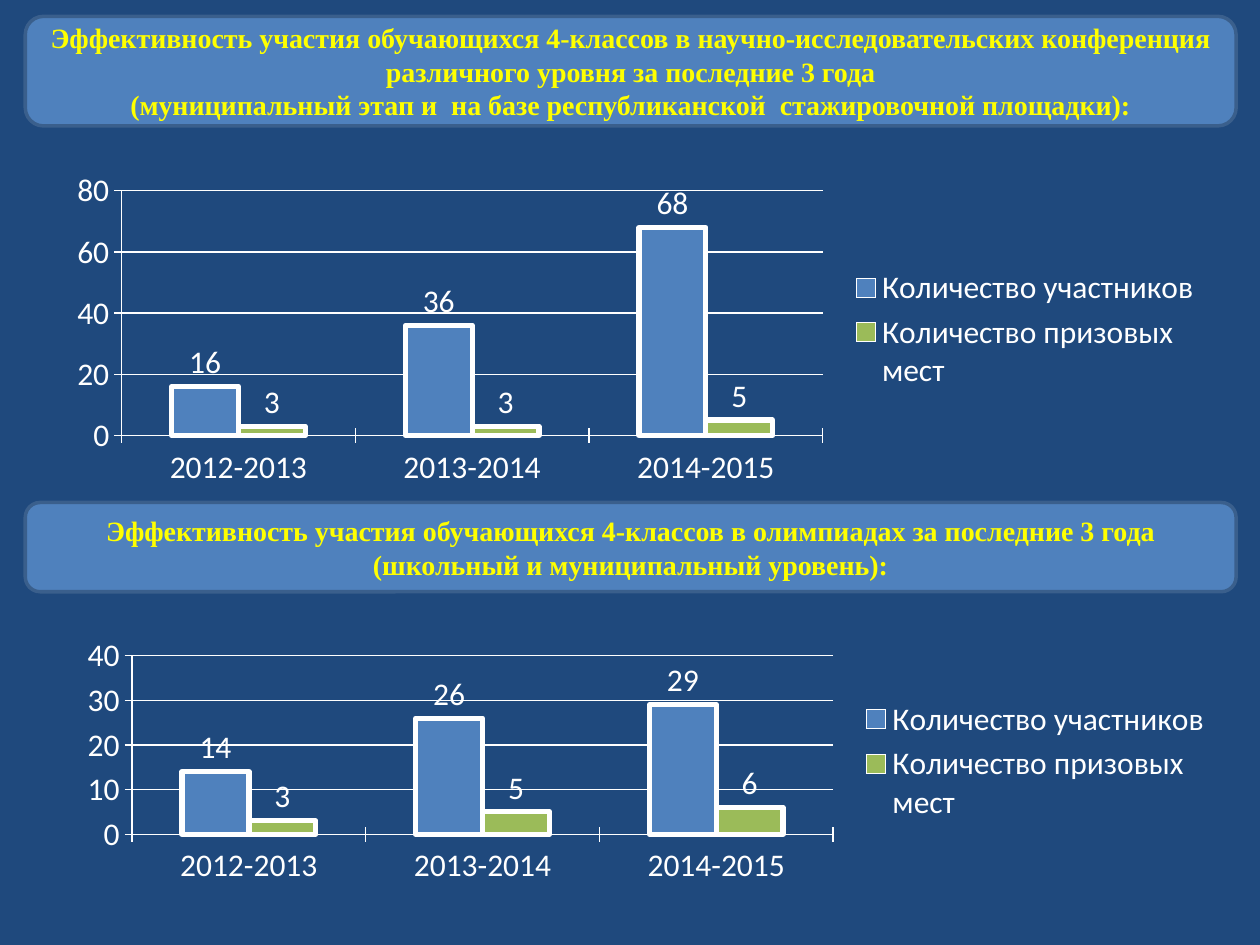
from pptx import Presentation
from pptx.chart.data import CategoryChartData
from pptx.dml.color import RGBColor
from pptx.enum.chart import XL_CHART_TYPE as ChartType
from pptx.enum.chart import XL_LABEL_POSITION as LabelPosition
from pptx.enum.chart import XL_LEGEND_POSITION as LegendPosition
from pptx.enum.chart import XL_TICK_MARK as TickMark
from pptx.enum.shapes import MSO_SHAPE as Shape
from pptx.enum.text import MSO_ANCHOR as Anchor
from pptx.enum.text import PP_ALIGN as Align
from pptx.util import Cm, Pt

NAVY = RGBColor(0x1F, 0x49, 0x7D)
BLUE = RGBColor(0x4F, 0x81, 0xBD)
BLUE_EDGE = RGBColor(0x3A, 0x5F, 0x8C)
GREEN = RGBColor(0x9B, 0xBB, 0x59)
YELLOW = RGBColor(0xFF, 0xFF, 0x00)
WHITE = RGBColor(0xFF, 0xFF, 0xFF)

YEARS = ["2012-2013", "2013-2014", "2014-2015"]
SERIES = [("Количество участников", BLUE), ("Количество призовых мест", GREEN)]
BANNER_LEFT, BANNER_WIDTH = 0.51, 24.41
CHART_WIDTH = 23.39

# Positions are in centimetres: banner (top, height), chart (left, top, height)
SECTIONS = [
    {
        "heading": [
            "Эффективность участия обучающихся 4-классов в научно-исследовательских "
            "конференция различного уровня за последние 3 года",
            "(муниципальный этап и  на базе республиканской  стажировочной площадки):",
        ],
        "banner": (0.33, 2.21),
        "chart": (1.09, 3.33, 6.6),
        "values": [(16, 36, 68), (3, 3, 5)],
        "scale": (80, 20),
    },
    {
        "heading": [
            "Эффективность участия обучающихся 4-классов в олимпиадах за последние 3 года",
            "(школьный и муниципальный уровень):",
        ],
        "banner": (10.13, 1.8),
        "chart": (1.3, 12.73, 5.21),
        "values": [(14, 26, 29), (3, 5, 6)],
        "scale": (40, 10),
    },
]


def set_line(line, color, width):
    line.color.rgb = color
    line.width = Pt(width)


def add_banner(slide, lines, top, height):
    banner = slide.shapes.add_shape(
        Shape.ROUNDED_RECTANGLE,
        Cm(BANNER_LEFT), Cm(top), Cm(BANNER_WIDTH), Cm(height),
    )
    banner.shadow.inherit = False
    banner.fill.solid()
    banner.fill.fore_color.rgb = BLUE
    set_line(banner.line, BLUE_EDGE, 2)
    frame = banner.text_frame
    frame.word_wrap = True
    frame.vertical_anchor = Anchor.MIDDLE
    for index, line in enumerate(lines):
        paragraph = frame.add_paragraph() if index else frame.paragraphs[0]
        paragraph.alignment = Align.CENTER
        run = paragraph.add_run()
        run.text = line
        run.font.name = "Times New Roman"
        run.font.size = Pt(16)
        run.font.bold = True
        run.font.color.rgb = YELLOW


def add_column_chart(slide, values, scale, left, top, height):
    data = CategoryChartData()
    data.categories = YEARS
    for (name, _), numbers in zip(SERIES, values):
        data.add_series(name, numbers)
    chart = slide.shapes.add_chart(
        ChartType.COLUMN_CLUSTERED,
        Cm(left), Cm(top), Cm(CHART_WIDTH), Cm(height), data,
    ).chart
    chart.has_title = False
    chart.font.name = "Calibri"
    chart.font.size = Pt(18)
    chart.font.color.rgb = WHITE
    chart.has_legend = True
    chart.legend.position = LegendPosition.RIGHT
    chart.legend.include_in_layout = False

    for axis in (chart.category_axis, chart.value_axis):
        axis.major_tick_mark = TickMark.CROSS
        set_line(axis.format.line, WHITE, 0.75)
    value_axis = chart.value_axis
    value_axis.minimum_scale = 0
    value_axis.maximum_scale, value_axis.major_unit = scale
    value_axis.has_major_gridlines = True
    set_line(value_axis.major_gridlines.format.line, WHITE, 0.75)

    plot = chart.plots[0]
    plot.vary_by_categories = False
    plot.gap_width = 150
    plot.overlap = 0
    for series, (_, color) in zip(plot.series, SERIES):
        series.format.fill.solid()
        series.format.fill.fore_color.rgb = color
        set_line(series.format.line, WHITE, 3)
        series.data_labels.show_value = True
        series.data_labels.position = LabelPosition.OUTSIDE_END


def main():
    presentation = Presentation()
    presentation.slide_width = Cm(25.4)
    presentation.slide_height = Cm(19.05)
    slide = presentation.slides.add_slide(presentation.slide_layouts[6])
    slide.background.fill.solid()
    slide.background.fill.fore_color.rgb = NAVY
    for section in SECTIONS:
        add_banner(slide, section["heading"], *section["banner"])
        add_column_chart(slide, section["values"], section["scale"], *section["chart"])
    presentation.save("out.pptx")


if __name__ == "__main__":
    main()
